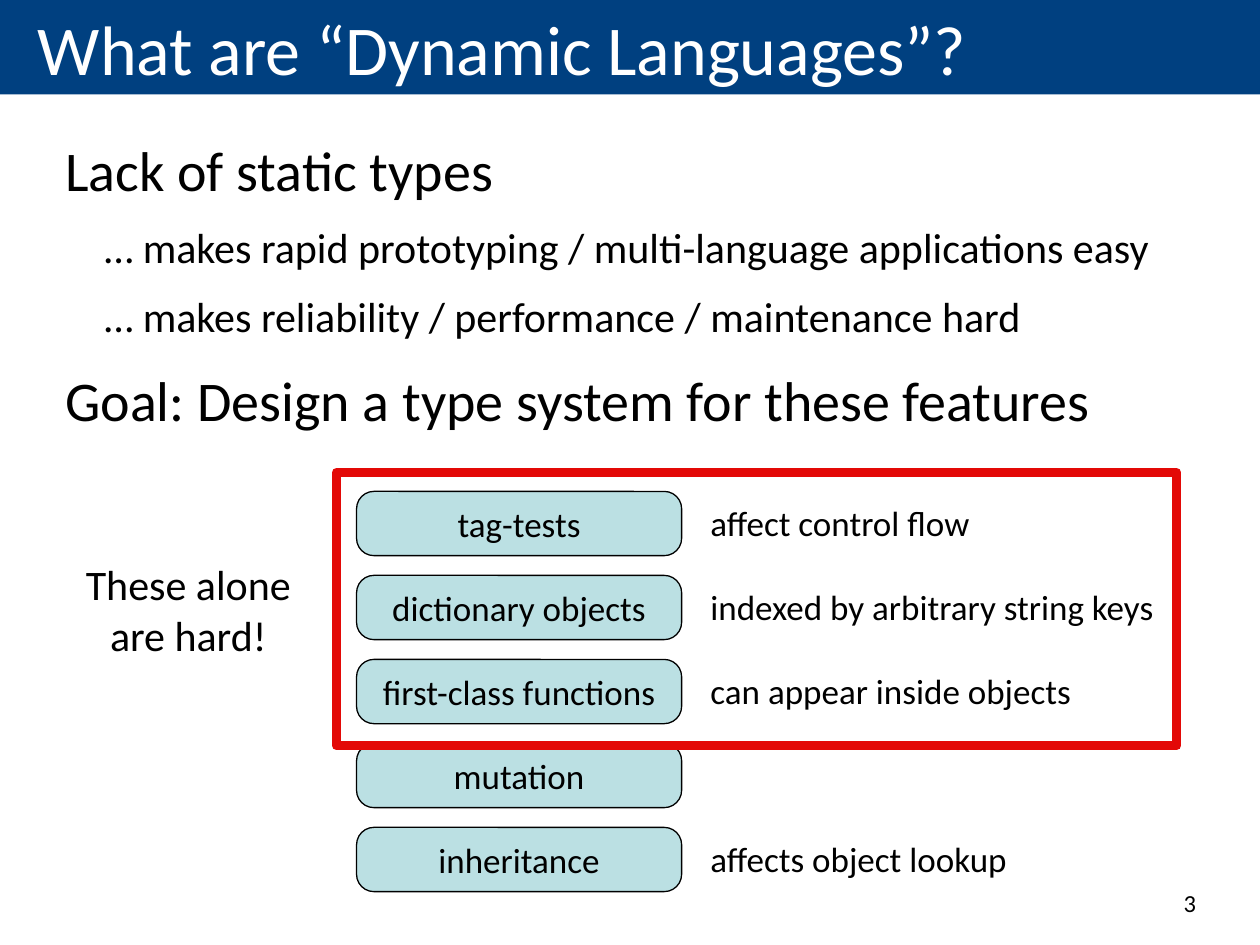
from pptx import Presentation
from pptx import util as u
from pptx.dml.color import RGBColor
from pptx.enum import shapes, text

COLORS = {"banner": "004080", "white": "FFFFFF", "ink": "000000",
          "feature": "BBE0E3", "frame": "E30907"}
Inches, Pt = u.Inches, u.Pt
LEFT, CENTER, RIGHT = text.PP_ALIGN.LEFT, text.PP_ALIGN.CENTER, text.PP_ALIGN.RIGHT
MIDDLE = text.MSO_ANCHOR.MIDDLE


def color(name):
    return RGBColor.from_string(COLORS[name])


def write(shape, words, size, align=LEFT, anchor=MIDDLE, ink="ink"):
    """Put one paragraph per entry of words, sizes matching, into a shape."""
    frame = shape.text_frame
    frame.word_wrap = True
    frame.auto_size = text.MSO_AUTO_SIZE.NONE
    frame.vertical_anchor = anchor
    frame.text = words
    para = frame.paragraphs[0]
    para.alignment = align
    para.font.name = "Calibri"
    para.font.size = Pt(size)
    para.font.color.rgb = color(ink)


deck = Presentation()
deck.slide_width, deck.slide_height = Inches(10), Inches(7.5)
page = deck.slides.add_slide(deck.slide_layouts[5])

# Title banner
title = page.shapes.title
title.left, title.top = Inches(0), Inches(0)
title.width, title.height = Inches(10), Inches(0.75)
title.fill.solid()
title.fill.fore_color.rgb = color("banner")
write(title, "What are “Dynamic Languages”?", 40, ink="white")
title.text_frame.margin_left = Inches(0.3)

# Page number
number = page.shapes.add_textbox(Inches(7.17), Inches(6.83), Inches(2.42), Inches(0.5))
write(number, "3", 14, RIGHT, text.MSO_ANCHOR.BOTTOM)

# Main points: (words, size, left indent)
points = [
    ("Lack of static types", 32, 0),
    ("… makes rapid prototyping / multi-language applications easy", 24, 0.31),
    ("… makes reliability / performance / maintenance hard", 24, 0.31),
    ("Goal: Design a type system for these features", 32, 0),
]
body = page.shapes.add_textbox(Inches(0.42), Inches(0.92), Inches(9.17), Inches(2.83))
body.text_frame.word_wrap = True
body.text_frame.text = "\n".join(words for words, size, indent in points)
for para, (words, size, indent) in zip(body.text_frame.paragraphs, points):
    para.font.name = "Calibri"
    para.font.size = Pt(size)
    para.font.color.rgb = color("ink")
    para.line_spacing = 1.2
    para.space_before = Pt(size * 0.2)
    para._p.get_or_add_pPr().set("marL", str(Inches(indent)))

# Language features, each with its remark
features = [
    ("tag-tests", "affect control flow"),
    ("dictionary objects", "indexed by arbitrary string keys"),
    ("first-class functions", "can appear inside objects"),
    ("mutation", None),
    ("inheritance", "affects object lookup"),
]
for row, (feature, remark) in enumerate(features):
    top = Inches(3.9 + row * 2 / 3)
    box = page.shapes.add_shape(shapes.MSO_SHAPE.ROUNDED_RECTANGLE,
                                Inches(2.83), top, Inches(2.58), Inches(0.51))
    box.adjustments[0] = 0.27
    box.shadow.inherit = False
    box.fill.solid()
    box.fill.fore_color.rgb = color("feature")
    box.line.color.rgb = color("ink")
    box.line.width = Pt(0.75)
    write(box, feature, 20, CENTER)
    if remark:
        note = page.shapes.add_textbox(Inches(5.54), top, Inches(3.96), Inches(0.5))
        write(note, remark, 20)

# Red frame around the first three features
frame = page.shapes.add_shape(shapes.MSO_SHAPE.RECTANGLE,
                              Inches(2.67), Inches(3.75), Inches(6.67), Inches(2.17))
frame.shadow.inherit = False
frame.fill.background()
frame.line.color.rgb = color("frame")
frame.line.width = Pt(5)

# Comment beside the frame
comment = page.shapes.add_textbox(Inches(0.58), Inches(3.75), Inches(1.83), Inches(2.17))
write(comment, "These alone are hard!", 24, CENTER)

deck.save("out.pptx")
